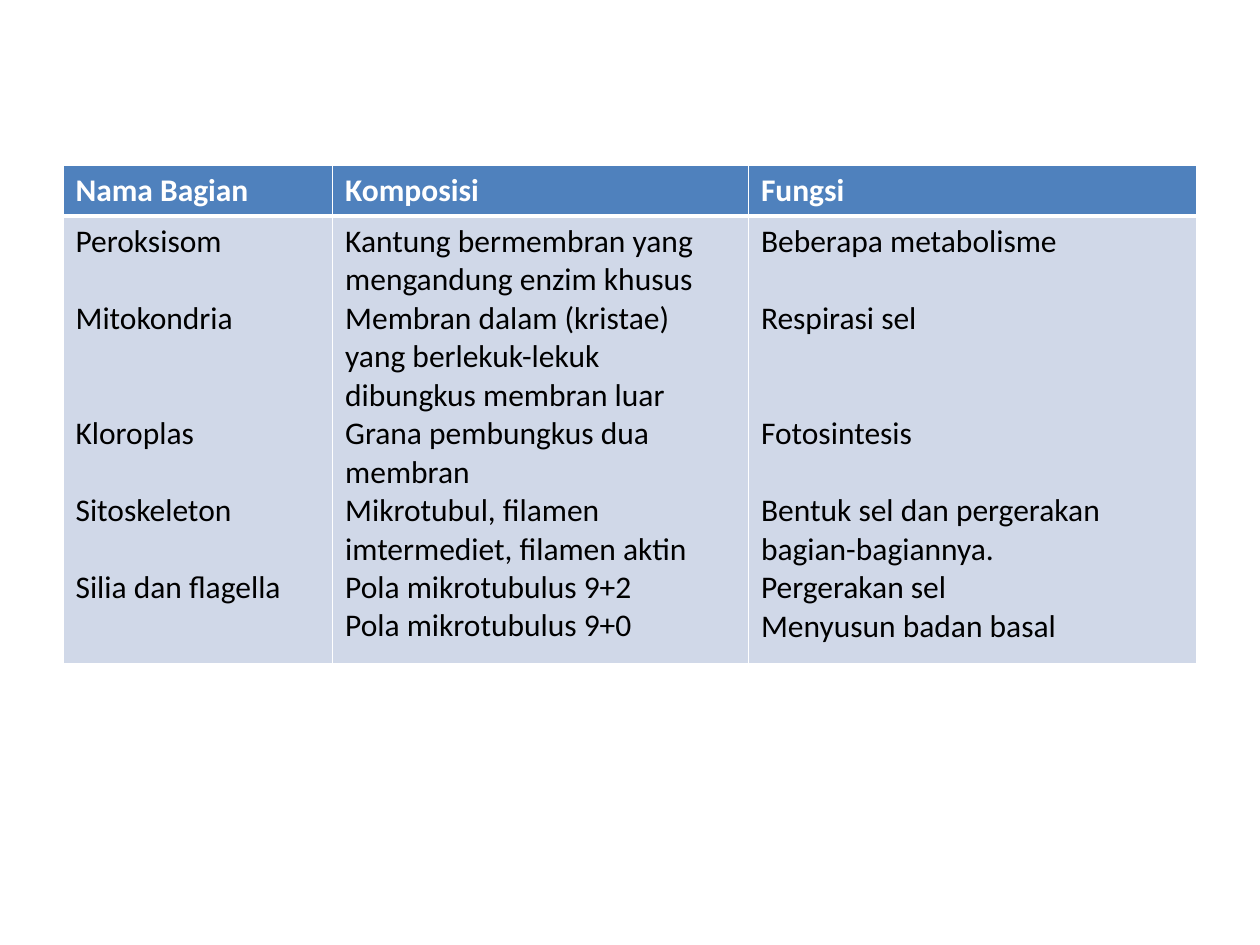
from dataclasses import dataclass

import pptx
import pptx.dml.color
import pptx.oxml
import pptx.oxml.ns
import pptx.util

Inches = pptx.util.Inches


@dataclass(frozen=True)
class Theme:
    font: str = "Calibri"
    size: int = 18
    line_height: int = 22
    header_fill: str = "4F81BD"
    body_fill: str = "D0D8E8"
    header_text: str = "FFFFFF"
    body_text: str = "000000"
    border: str = "FFFFFF"
    thin: int = 1
    thick: int = 3


@dataclass(frozen=True)
class Entry:
    text: str
    lines_before: int = 0


@dataclass(frozen=True)
class Column:
    heading: str
    width: float
    entries: tuple[Entry, ...]


THEME = Theme()
COLUMNS = (
    Column("Nama Bagian", 2.14, (
        Entry("Peroksisom"),
        Entry("Mitokondria", 1),
        Entry("Kloroplas", 2),
        Entry("Sitoskeleton", 1),
        Entry("Silia dan flagella", 1),
    )),
    Column("Komposisi", 3.3, (
        Entry("Kantung bermembran yang mengandung enzim khusus"),
        Entry("Membran dalam (kristae) yang berlekuk-lekuk dibungkus membran luar"),
        Entry("Grana pembungkus dua membran"),
        Entry("Mikrotubul, filamen imtermediet, filamen aktin"),
        Entry("Pola mikrotubulus 9+2"),
        Entry("Pola mikrotubulus 9+0"),
    )),
    Column("Fungsi", 3.56, (
        Entry("Beberapa metabolisme"),
        Entry("Respirasi sel", 1),
        Entry("Fotosintesis", 2),
        Entry("Bentuk sel dan pergerakan bagian-bagiannya.", 1),
        Entry("Pergerakan sel"),
        Entry("Menyusun badan basal"),
    )),
)
ROW_HEIGHTS = (0.39, 3.55)


def set_borders(cell: pptx.table._Cell, top: int, bottom: int) -> None:
    properties = cell._tc.get_or_add_tcPr()
    widths = {"lnL": THEME.thin, "lnR": THEME.thin, "lnT": top, "lnB": bottom}
    for position, (side, width) in enumerate(widths.items()):
        line = pptx.oxml.parse_xml(
            f'<a:{side} {pptx.oxml.ns.nsdecls("a")} w="{pptx.util.Pt(width)}">'
            f'<a:solidFill><a:srgbClr val="{THEME.border}"/></a:solidFill></a:{side}>'
        )
        properties.insert(position, line)


def fill_cell(cell: pptx.table._Cell, entries: tuple[Entry, ...], header: bool) -> None:
    cell.fill.solid()
    fill = THEME.header_fill if header else THEME.body_fill
    cell.fill.fore_color.rgb = pptx.dml.color.RGBColor.from_string(fill)
    set_borders(
        cell,
        THEME.thin if header else THEME.thick,
        THEME.thick if header else THEME.thin,
    )
    color = THEME.header_text if header else THEME.body_text
    for index, entry in enumerate(entries):
        frame = cell.text_frame
        paragraph = frame.add_paragraph() if index else frame.paragraphs[0]
        if entry.lines_before:
            paragraph.space_before = pptx.util.Pt(entry.lines_before * THEME.line_height)
        run = paragraph.add_run()
        run.text = entry.text
        run.font.name = THEME.font
        run.font.size = pptx.util.Pt(THEME.size)
        run.font.bold = header
        run.font.color.rgb = pptx.dml.color.RGBColor.from_string(color)


def main() -> None:
    presentation = pptx.Presentation()
    presentation.slide_width = Inches(10)
    presentation.slide_height = Inches(7.5)
    slide = presentation.slides.add_slide(presentation.slide_layouts[6])
    table = slide.shapes.add_table(
        len(ROW_HEIGHTS), len(COLUMNS),
        Inches(0.5), Inches(1.31),
        Inches(sum(column.width for column in COLUMNS)), Inches(sum(ROW_HEIGHTS)),
    ).table
    for row, height in zip(table.rows, ROW_HEIGHTS):
        row.height = Inches(height)
    for index, column in enumerate(COLUMNS):
        table.columns[index].width = Inches(column.width)
        fill_cell(table.cell(0, index), (Entry(column.heading),), True)
        fill_cell(table.cell(1, index), column.entries, False)
    presentation.save("out.pptx")


if __name__ == "__main__":
    main()
